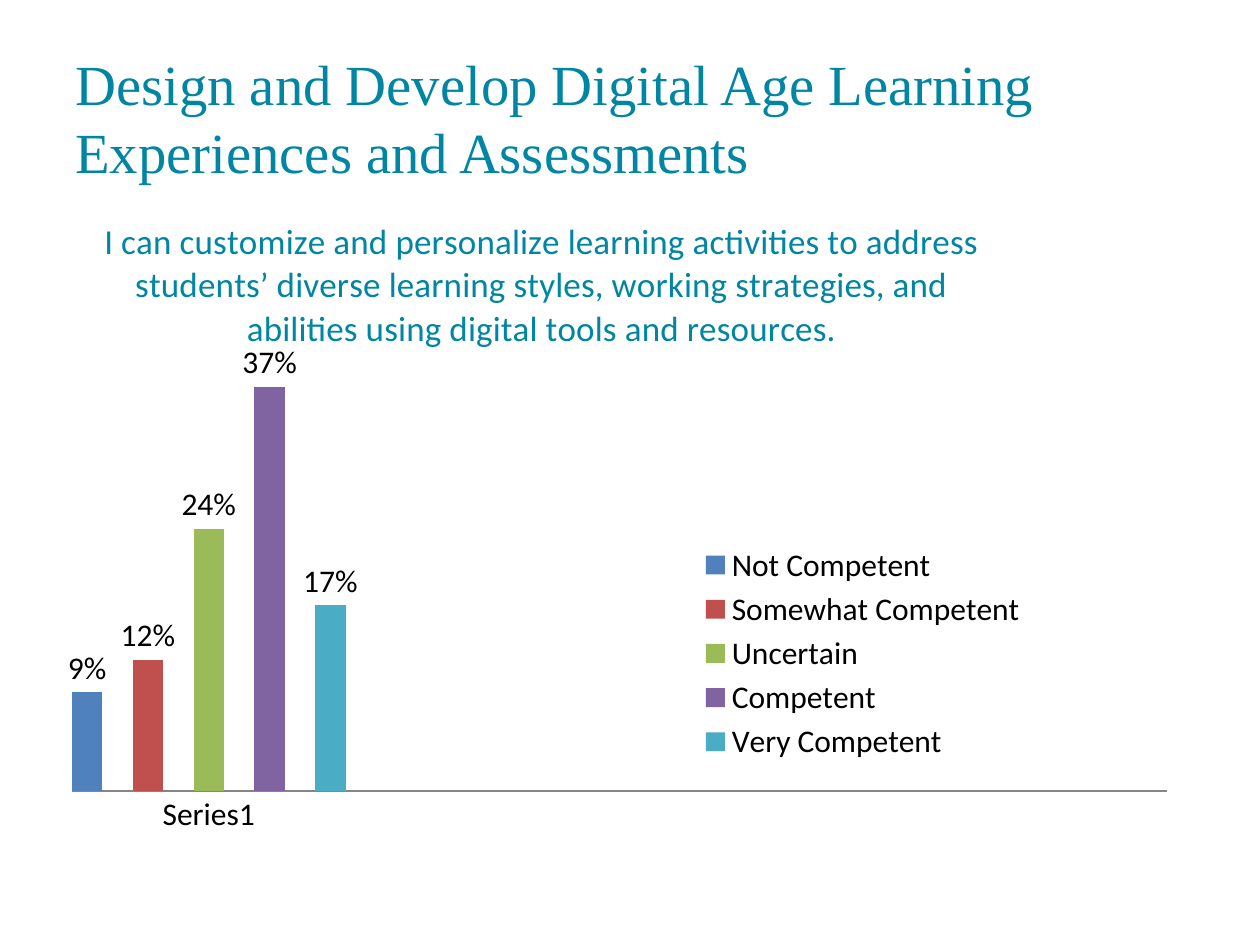
from dataclasses import dataclass

from lxml import etree
from pptx import Presentation
from pptx.chart.data import CategoryChartData
from pptx.dml.color import RGBColor
from pptx.enum.chart import XL_CHART_TYPE, XL_LABEL_POSITION, XL_LEGEND_POSITION, XL_TICK_MARK
from pptx.enum.text import MSO_ANCHOR
from pptx.oxml.ns import qn
from pptx.util import Emu, Pt

PX_PER_INCH = 126
TEAL = "0085A2"
BLACK = "000000"


@dataclass(frozen=True)
class Rating:
    name: str
    share: float
    color: str


@dataclass(frozen=True)
class Area:
    x: int
    y: int
    w: int | None = None
    h: int | None = None


CHART = Area(53, 210, 1134, 624)
RATINGS = [
    Rating("Not Competent", 0.09, "4F81BD"),
    Rating("Somewhat Competent", 0.12, "C0504D"),
    Rating("Uncertain", 0.24, "9BBB59"),
    Rating("Competent", 0.37, "8064A2"),
    Rating("Very Competent", 0.17, "4BACC6"),
]
HEADING = "Design and Develop Digital Age Learning Experiences and Assessments"
STATEMENT = (
    "I can customize and personalize learning activities to address "
    "students’ diverse learning styles, working strategies, and "
    "abilities using digital tools and resources."
)


def px(length: int) -> Emu:
    return Emu(round(length * 914400 / PX_PER_INCH))


def rgb(color: str) -> RGBColor:
    return RGBColor.from_string(color)


def style_font(font, name: str, size: float, color: str) -> None:
    font.name = name
    font.size = Pt(size)
    font.bold = False
    font.color.rgb = rgb(color)


def place(element, area: Area, inner: bool = False) -> None:
    for old in element.findall(qn("c:layout")):
        element.remove(old)
    layout = etree.Element(qn("c:layout"))
    manual = etree.SubElement(layout, qn("c:manualLayout"))
    entries = [("layoutTarget", "inner")] if inner else []
    entries += [("xMode", "edge"), ("yMode", "edge")]
    for key, whole in zip("xywh", (CHART.w, CHART.h) * 2):
        length = getattr(area, key)
        if length is not None:
            entries.append((key, length / whole))
    for tag, value in entries:
        etree.SubElement(manual, qn(f"c:{tag}")).set("val", str(value))
    leading = {qn("c:tx"), qn("c:legendPos"), qn("c:legendEntry")}
    element.insert(sum(child.tag in leading for child in element), layout)


def add_heading(slide) -> None:
    heading = slide.shapes.add_textbox(px(63), px(38), px(1034), px(158))
    frame = heading.text_frame
    frame.word_wrap = True
    frame.vertical_anchor = MSO_ANCHOR.MIDDLE
    frame.text = HEADING
    style_font(frame.paragraphs[0].runs[0].font, "Times New Roman", 32.4, TEAL)


def add_rating_chart(slide, ratings: list[Rating]) -> None:
    survey = CategoryChartData(number_format="0%")
    survey.categories = ["Series1", "", "", ""]
    for rating in ratings:
        survey.add_series(rating.name, [rating.share, None, None, None])
    chart = slide.shapes.add_chart(
        XL_CHART_TYPE.COLUMN_CLUSTERED,
        px(CHART.x), px(CHART.y), px(CHART.w), px(CHART.h), survey,
    ).chart
    style_font(chart.font, "Calibri", 18, BLACK)

    chart.has_title = True
    statement = chart.chart_title.text_frame
    statement.text = STATEMENT
    style_font(statement.paragraphs[0].runs[0].font, "Calibri", 20, TEAL)
    place(chart.chart_title._element, Area(45, 0))

    chart.has_legend = True
    chart.legend.position = XL_LEGEND_POSITION.BOTTOM
    chart.legend.include_in_layout = False
    style_font(chart.legend.font, "Calibri", 18, BLACK)
    place(chart.legend._element, Area(640, 330, 340, 227))

    shares = chart.value_axis
    shares.minimum_scale, shares.maximum_scale = 0, 0.4
    shares.has_major_gridlines = False
    shares.visible = False
    baseline = chart.category_axis
    baseline.major_tick_mark = XL_TICK_MARK.NONE
    baseline.format.line.color.rgb = rgb("868686")
    baseline.format.line.width = Pt(1)

    plot = chart.plots[0]
    plot.gap_width, plot.overlap = 0, -100
    plot.vary_by_categories = False
    place(plot._element.getparent(), Area(19, 144, 1095, 437), inner=True)
    for series, rating in zip(plot.series, ratings):
        series.format.fill.solid()
        series.format.fill.fore_color.rgb = rgb(rating.color)
        labels = series.data_labels
        labels.show_value = True
        labels.number_format = "0%"
        labels.number_format_is_linked = False
        labels.position = XL_LABEL_POSITION.OUTSIDE_END
        style_font(labels.font, "Calibri", 18, BLACK)


def main() -> None:
    deck = Presentation()
    deck.slide_width, deck.slide_height = px(1260), px(945)
    slide = deck.slides.add_slide(deck.slide_layouts[6])
    add_heading(slide)
    add_rating_chart(slide, RATINGS)
    deck.save("out.pptx")


if __name__ == "__main__":
    main()
